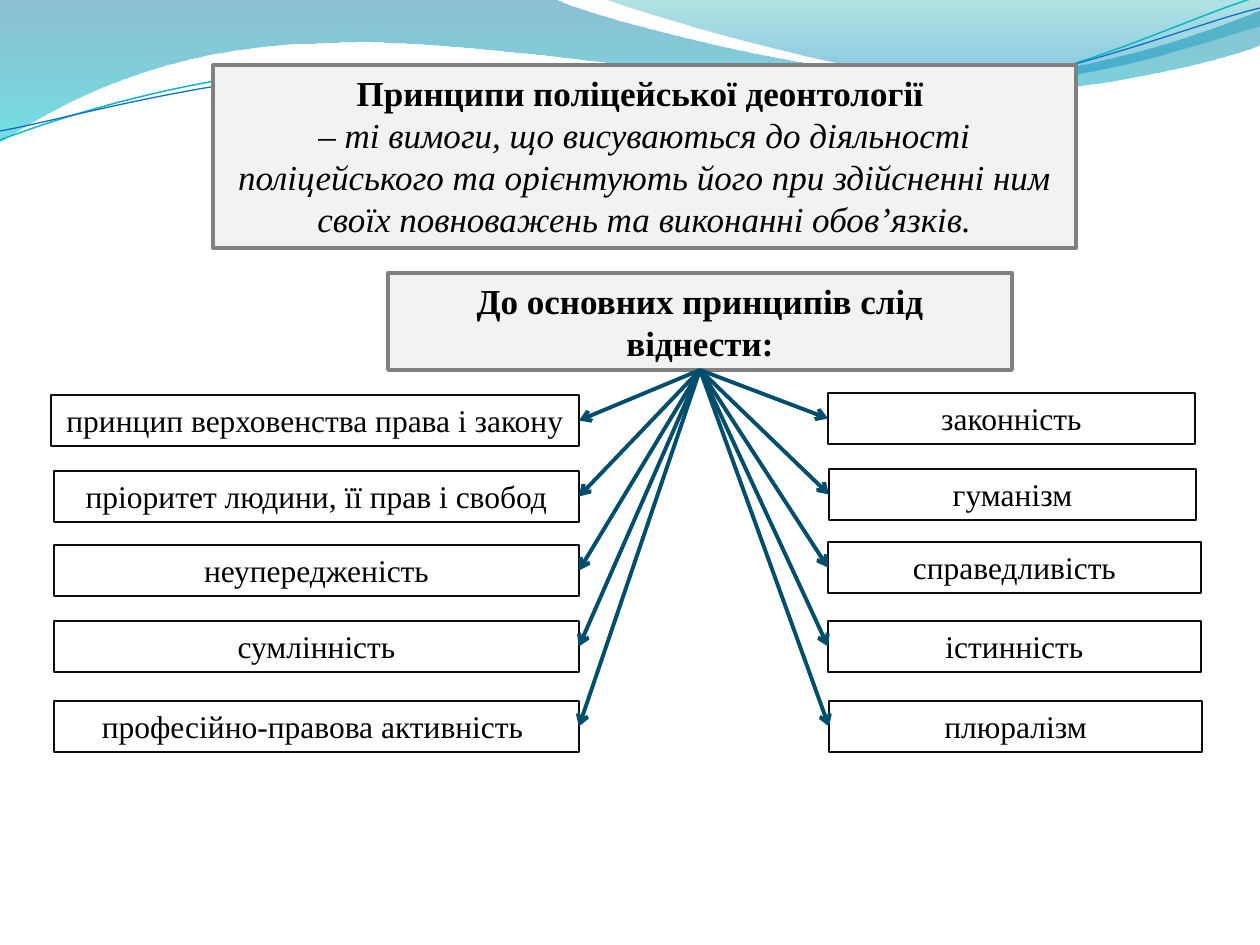
from dataclasses import dataclass

from lxml.etree import SubElement
from pptx import Presentation
from pptx.dml.color import RGBColor
from pptx.enum.shapes import MSO_CONNECTOR, MSO_SHAPE
from pptx.enum.text import MSO_ANCHOR, MSO_AUTO_SIZE, PP_ALIGN
from pptx.oxml.ns import qn
from pptx.util import Pt

SCALE = 914400 / 126
BOTTOM, LEFT, RIGHT = 2, 1, 3


@dataclass(frozen=True)
class Theme:
    font: str = "Times New Roman"
    ink: str = "000000"
    panel: str = "F2F2F2"
    frame: str = "808080"
    edge: str = "0D0D0D"
    arrow: str = "004E6C"
    teal: str = "0AB8BF"
    blue: str = "0F6FC6"
    # Gradient stops: position, colour, opacity in percent
    deep: tuple = ((0, "0074A1", 45), (1, "00C6CF", 55))
    light: tuple = ((0, "00A1A9", 30), (0.8, "008BBF", 45))
    head: int = 20
    body: int = 18
    thick: float = 2.25
    thin: float = 1.5


THEME = Theme()

# Each wave is a start point and steps: one point for a line,
# three for a cubic curve.
DEEP = ((0, 0), [
    [(554, -1)],
    [(600, 21), (837, 79), (955, 79)],
    [(1074, 79), (1207, 33), (1260, 11)],
    [(1261, 45)],
    [(1239, 55), (1096, 96), (940, 95)],
    [(784, 95), (481, 35), (324, 43)],
    [(163, 45), (58, 105), (-1, 142)],
    [(0, 0)],
])
LIGHT = ((604, -1), [
    [(641, 14), (859, 78), (969, 82)],
    [(1079, 87), (1211, 40), (1260, 26)],
    [(1260, 0)],
    [(604, -1)],
])
TEAL = ((0, 140), [
    [(60, 117), (199, 72), (349, 66)],
    [(498, 59), (747, 112), (898, 101)],
    [(1050, 89), (1182, 19), (1257, -3)],
])
BLUE = ((0, 131), [
    [(59, 121), (207, 77), (357, 71)],
    [(508, 64), (752, 106), (903, 95)],
    [(1053, 84), (1186, 26), (1260, 8)],
])

TITLE = "Принципи поліцейської деонтології "
MEANING = (
    "ті вимоги, що висуваються до діяльності поліцейського та орієнтують "
    "його при здійсненні ним своїх повноважень та виконанні обов’язків."
)
LEAD = "До основних принципів слід віднести:"

# Text, left, top, width
DUTIES = [
    ("принцип верховенства права і закону", 51, 395, 528),
    ("пріоритет людини, її прав і свобод", 54, 471, 525),
    ("неупередженість", 54, 545, 525),
    ("сумлінність", 54, 621, 525),
    ("професійно-правова активність ", 54, 701, 525),
]
VALUES = [
    ("законність", 828, 393, 367),
    ("гуманізм", 829, 469, 367),
    ("справедливість", 828, 542, 373),
    ("істинність", 828, 621, 373),
    ("плюралізм", 829, 701, 373),
]
ROW = 51


def px(num):
    return round(num * SCALE)


def rgb(code):
    return RGBColor.from_string(code)


def draw(slide, wave, close):
    """Build the outline from all points, then join threes into curves."""
    start, steps = wave
    pen = slide.shapes.build_freeform(*start, scale=SCALE)
    pen.add_line_segments([p for step in steps for p in step], close=close)
    shape = pen.convert_to_shape()
    shape.shadow.inherit = False
    lines = iter(list(shape.element.iter(qn("a:lnTo"))))
    for step in steps:
        group = [next(lines) for _ in step]
        if len(group) == 3:
            curve = SubElement(group[0].getparent(), qn("a:cubicBezTo"))
            group[0].addprevious(curve)
            for line in group:
                curve.append(line[0])
                line.getparent().remove(line)
    return shape


def add_wave(slide, wave, stops):
    shape = draw(slide, wave, True)
    shape.line.fill.background()
    shape.fill.gradient()
    shape.fill.gradient_angle = 270
    for stop, (place, code, _) in zip(shape.fill.gradient_stops, stops):
        stop.position = place
        stop.color.rgb = rgb(code)
    for node, (_, _, alpha) in zip(shape.element.iter(qn("a:srgbClr")), stops):
        SubElement(node, qn("a:alpha"), val=str(alpha * 1000))


def add_curve(slide, wave, code, width):
    shape = draw(slide, wave, False)
    shape.fill.background()
    set_line(shape, code, width)


def set_line(shape, code, width):
    shape.line.color.rgb = rgb(code)
    shape.line.width = Pt(width)


def set_panel(shape):
    shape.fill.solid()
    shape.fill.fore_color.rgb = rgb(THEME.panel)
    set_line(shape, THEME.frame, THEME.thick)


def set_text(shape, size, bold=False):
    frame = shape.text_frame
    frame.word_wrap = True
    frame.auto_size = MSO_AUTO_SIZE.SHAPE_TO_FIT_TEXT
    frame.vertical_anchor = MSO_ANCHOR.TOP
    for para in frame.paragraphs:
        para.alignment = PP_ALIGN.CENTER
        for run in para.runs:
            run.font.name = THEME.font
            run.font.size = Pt(size)
            run.font.bold = bold
            run.font.color.rgb = rgb(THEME.ink)


def add_title(slide):
    title = slide.shapes.title
    title.left, title.top, title.width, title.height = map(
        px, (213, 65, 863, 183))
    set_panel(title)
    title.text_frame.text = f"{TITLE}\n– "
    first, second = title.text_frame.paragraphs
    run = second.add_run()
    run.text = MEANING
    run.font.italic = True
    set_text(title, THEME.head)
    first.runs[0].font.bold = True
    # Bring the title in front of the waves
    title.element.getparent().append(title.element)


def add_box(slide, text, left, top, width, height=ROW):
    box = slide.shapes.add_shape(
        MSO_SHAPE.RECTANGLE, *map(px, (left, top, width, height)))
    box.shadow.inherit = False
    box.fill.background()
    set_line(box, THEME.edge, THEME.thin)
    box.text_frame.text = text
    set_text(box, THEME.body)
    return box


def add_arrow(slide, start, end, side):
    link = slide.shapes.add_connector(MSO_CONNECTOR.STRAIGHT, 0, 0, 0, 0)
    link.begin_connect(start, BOTTOM)
    link.end_connect(end, side)
    set_line(link, THEME.arrow, THEME.thick)
    SubElement(link.element.spPr.find(qn("a:ln")), qn("a:tailEnd"), type="arrow")
    SubElement(link.element.spPr, qn("a:effectLst"))


def main():
    deck = Presentation()
    deck.slide_width, deck.slide_height = px(1260), px(945)
    slide = deck.slides.add_slide(deck.slide_layouts[5])
    add_wave(slide, DEEP, THEME.deep)
    add_wave(slide, LIGHT, THEME.light)
    add_curve(slide, TEAL, THEME.teal, 0.85)
    add_curve(slide, BLUE, THEME.blue, 0.75)
    add_title(slide)
    lead = add_box(slide, LEAD, 388, 273, 624, 97)
    set_panel(lead)
    set_text(lead, THEME.head, bold=True)
    for rows, side in ((DUTIES, RIGHT), (VALUES, LEFT)):
        for row in rows:
            add_arrow(slide, lead, add_box(slide, *row), side)
    deck.save("out.pptx")


if __name__ == "__main__":
    main()
